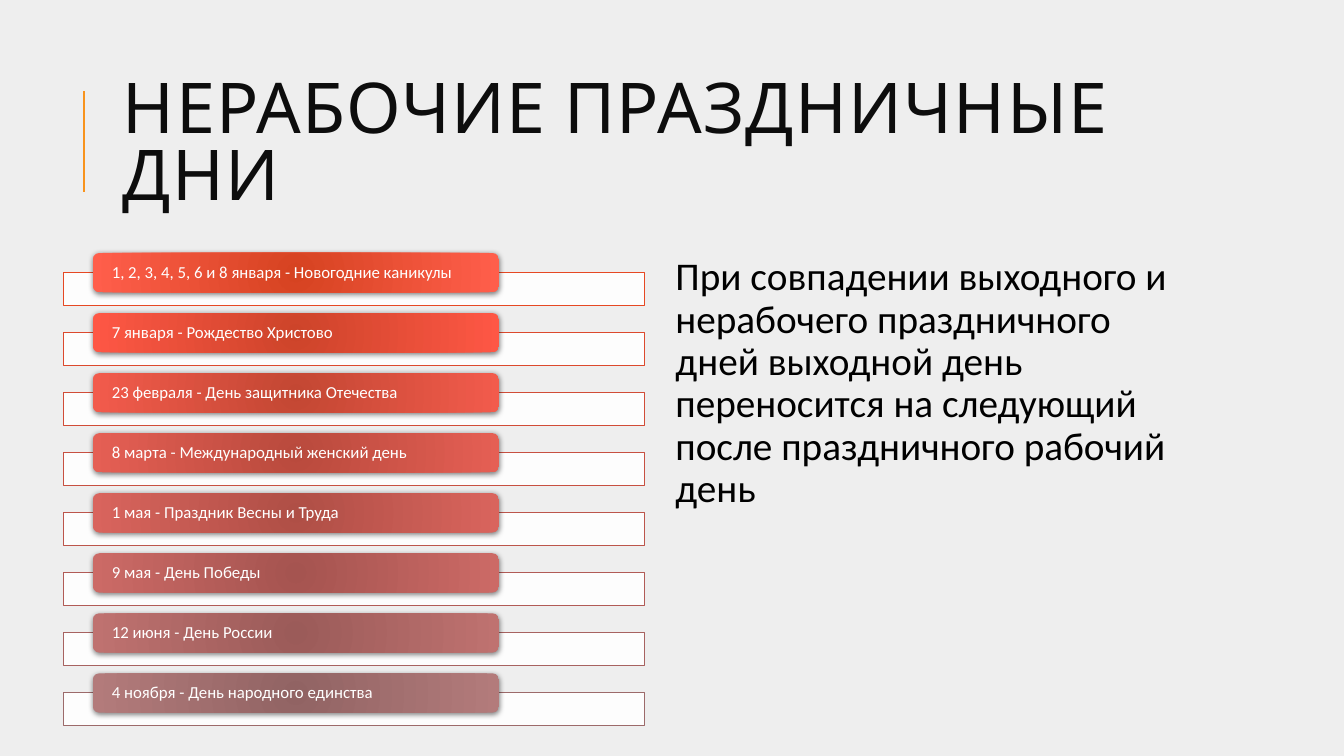
import pptx
import pptx.dml.color
import pptx.enum.shapes
import pptx.enum.text
import pptx.oxml
import pptx.oxml.ns
import pptx.util
from pptx.util import Inches

RGBColor = pptx.dml.color.RGBColor
Shape = pptx.enum.shapes.MSO_SHAPE
Anchor = pptx.enum.text.MSO_ANCHOR

BACKGROUND = RGBColor(0xEE, 0xEE, 0xEE)
ACCENT = RGBColor(0xF8, 0x93, 0x1D)
INK = RGBColor(0x0D, 0x0D, 0x0D)
BLACK = RGBColor(0, 0, 0)
WHITE = RGBColor(0xFF, 0xFF, 0xFF)

HOLIDAYS = [
    ("1, 2, 3, 4, 5, 6 и 8 января - Новогодние каникулы", "E64823", "D64321", "FF5E4B"),
    ("7 января - Рождество Христово", "DC492D", "CD442A", "FE5745"),
    ("23 февраля - День защитника Отечества", "D14C37", "C34733", "F25B4C"),
    ("8 марта - Международный женский день", "C75041", "B94A3D", "E55F54"),
    ("1 мая - Праздник Весны и Труда", "BC554B", "AF4F46", "D9645D"),
    ("9 мая - День Победы", "B15B56", "A55450", "CC6A66"),
    ("12 июня - День России", "A76260", "9B5B59", "BF7270"),
    ("4 ноября - День народного единства", "9C6A6A", "916363", "B37B7B"),
]
FIRST_TOP, LAST_TOP = 2.7, 6.87
PITCH = (LAST_TOP - FIRST_TOP) / (len(HOLIDAYS) - 1)


def element(markup):
    return pptx.oxml.parse_xml(markup.replace(" ", f" {pptx.oxml.ns.nsdecls('a')} ", 1))


class HolidayPage:
    """Draw the elements of one slide in a shared style."""

    def __init__(self, deck):
        self.page = deck.slides.add_slide(deck.slide_layouts[6])
        self.page.background.fill.solid()
        self.page.background.fill.fore_color.rgb = BACKGROUND

    def rule(self, x, start, end):
        line = self.page.shapes.add_connector(
            pptx.enum.shapes.MSO_CONNECTOR.STRAIGHT,
            Inches(x), Inches(start), Inches(x), Inches(end))
        line.line.color.rgb = ACCENT
        line.line.width = pptx.util.Pt(1.5)
        line._element.spPr.append(element("<a:effectLst />"))

    def set_text(self, shape, text, size, color, font="Calibri", inset=(0.1, 0.05),
                 anchor=Anchor.MIDDLE, leading=0.9, tracking=0):
        box = shape.text_frame
        box.word_wrap = True
        box.vertical_anchor = anchor
        box.margin_left = box.margin_right = Inches(inset[0])
        box.margin_top = box.margin_bottom = Inches(inset[1])
        para = box.paragraphs[0]
        para.alignment = pptx.enum.text.PP_ALIGN.LEFT
        para.line_spacing = leading
        span = para.add_run()
        span.text = text
        span.font.name = font
        span.font.size = pptx.util.Pt(size)
        span.font.color.rgb = color
        if tracking:
            span.font._element.set("spc", str(tracking * 100))

    def text(self, left, top, width, height, text, size, color, **style):
        shape = self.page.shapes.add_textbox(
            Inches(left), Inches(top), Inches(width), Inches(height))
        self.set_text(shape, text, size, color, **style)

    def frame(self, top, color):
        shape = self.page.shapes.add_shape(
            Shape.RECTANGLE, Inches(0.63), Inches(top), Inches(5.76), Inches(0.33))
        shape.shadow.inherit = False
        shape.fill.solid()
        shape.fill.fore_color.rgb = WHITE
        shape._element.spPr.find(".//" + pptx.oxml.ns.qn("a:srgbClr")).append(
            element('<a:alpha val="90000"/>'))
        shape.line.color.rgb = color
        shape.line.width = pptx.util.Pt(0.75)

    def label(self, top, text, inner, outer):
        shape = self.page.shapes.add_shape(
            Shape.ROUNDED_RECTANGLE, Inches(0.92), Inches(top), Inches(4.03), Inches(0.39))
        shape.line.fill.background()
        shape.fill.gradient()
        for stop, color in zip(shape.fill.gradient_stops, (inner, outer)):
            stop.color.rgb = color
        gradient = shape._element.spPr.find(pptx.oxml.ns.qn("a:gradFill"))
        gradient.remove(gradient.find(pptx.oxml.ns.qn("a:lin")))
        gradient.append(element(
            '<a:path path="circle"><a:fillToRect l="100000" t="100000" '
            'r="100000" b="100000"/></a:path>'))
        shape.shadow.inherit = False
        shape._element.spPr.find(pptx.oxml.ns.qn("a:effectLst")).append(element(
            '<a:outerShdw blurRad="50800" dist="12700" dir="5400000" rotWithShape="0">'
            '<a:srgbClr val="000000"><a:alpha val="50000"/></a:srgbClr></a:outerShdw>'))
        self.set_text(shape, text, 12, WHITE, inset=(0.17, 0))


def main():
    deck = pptx.Presentation()
    deck.slide_width, deck.slide_height = Inches(13.33), Inches(7.5)
    page = HolidayPage(deck)
    page.rule(0.83, 1.9, 0.9)
    page.text(1.12, 0.64, 10.63, 1.64, "НЕРАБОЧИЕ ПРАЗДНИЧНЫЕ ДНИ", 50, INK,
              font="Cabin", leading=0.8, tracking=1)
    for row, (text, border, inner, outer) in enumerate(HOLIDAYS):
        top = FIRST_TOP + row * PITCH
        page.frame(top, RGBColor.from_string(border))
        page.label(top - 0.19, text, RGBColor.from_string(inner), RGBColor.from_string(outer))
    page.text(6.55, 2.5, 5.2, 4.4,
              "При совпадении выходного и нерабочего праздничного дней выходной день "
              "переносится на следующий после праздничного рабочий день",
              28, BLACK, inset=(0.15, 0.05), anchor=Anchor.TOP)
    deck.save("out.pptx")


if __name__ == "__main__":
    main()
